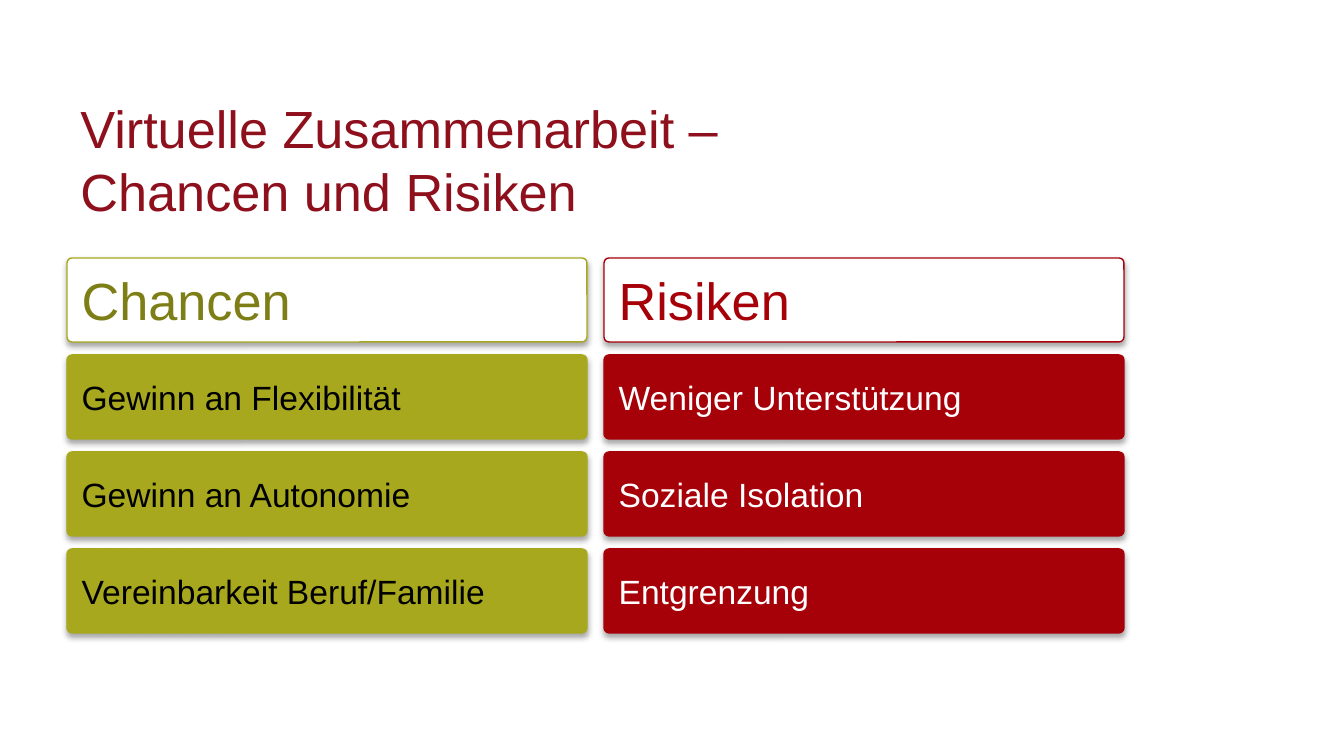
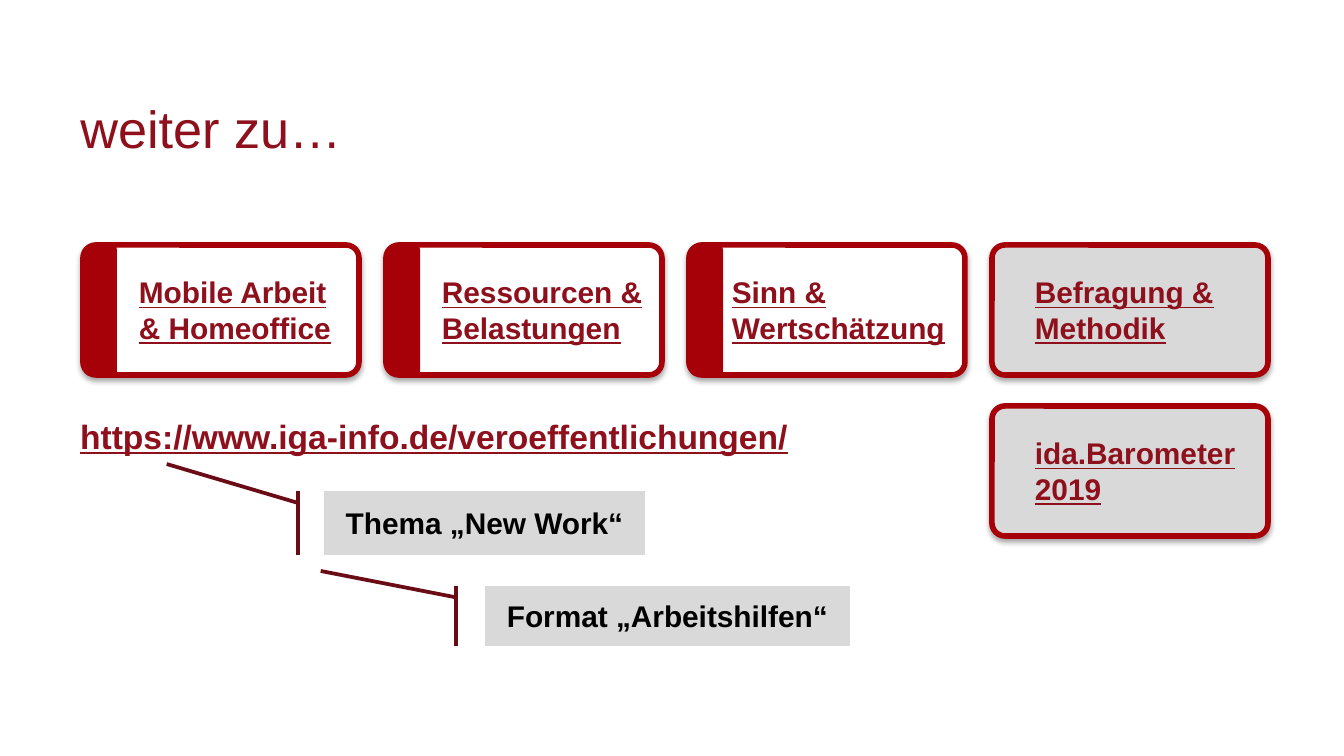
from dataclasses import dataclass

from lxml import etree
from pptx import Presentation
from pptx import util as u
from pptx.dml.color import RGBColor
from pptx.enum import shapes, text
from pptx.oxml import ns
from pptx.shapes.autoshape import Shape
from pptx.slide import Slide

PX = 914400 / 134.4  # EMU in one px
FONT = "Arial"
WHITE, BLACK, GREY = "FFFFFF", "000000", "D9D9D9"
RED, TITLE_RED, DARK_RED = "A60009", "8E101C", "690C15"
OLIVE, DARK_OLIVE = "A8A81E", "7E7E17"
LEFT = 67
SHAPE = shapes.MSO_SHAPE


@dataclass(frozen=True)
class Column:
    heading: str
    heading_color: str
    color: str
    text_color: str
    items: tuple[str, ...]


@dataclass(frozen=True)
class Card:
    label: str
    col: int
    row: int = 0
    indent: int = 26
    fill: str = WHITE
    bar: bool = False


@dataclass(frozen=True)
class Callout:
    label: str
    box: tuple[int, int, int, int]
    pointer: tuple[float, float]  # tip, as (y, x) share of the box


COLUMNS = (
    Column("Chancen", DARK_OLIVE, OLIVE, BLACK,
           ("Gewinn an Flexibilität", "Gewinn an Autonomie", "Vereinbarkeit Beruf/Familie")),
    Column("Risiken", RED, RED, WHITE,
           ("Weniger Unterstützung", "Soziale Isolation", "Entgrenzung")),
)
CARDS = (
    Card("Mobile Arbeit & Homeoffice", 0, indent=39, bar=True),
    Card("Ressourcen & Belastungen", 1, indent=39, bar=True),
    Card("Sinn & Wertschätzung", 2, bar=True),
    Card("Befragung & Methodik", 3, fill=GREY),
    Card("ida.Barometer 2019", 3, row=1, fill=GREY),
)
CALLOUTS = (
    Callout("Thema „New Work“", (324, 491, 321, 64), (-0.42, -0.49)),
    Callout("Format „Arbeitshilfen“", (485, 586, 365, 60), (-0.25, -0.45)),
)


def px(n: int) -> u.Emu:
    return u.Emu(round(n * PX))


def rgb(color: str) -> RGBColor:
    return RGBColor.from_string(color)


def write(sp: Shape, content: str, size: int, color: str, bold: bool = False,
          underline: bool = False, align=text.PP_ALIGN.LEFT,
          anchor=text.MSO_ANCHOR.MIDDLE, indent: int = 0) -> None:
    tf = sp.text_frame
    tf.text = content
    tf.word_wrap = True
    tf.auto_size = text.MSO_AUTO_SIZE.NONE
    tf.vertical_anchor = anchor
    p = tf.paragraphs[0]
    p.alignment = align
    if indent:
        pPr = p._p.get_or_add_pPr()
        pPr.set("marL", str(px(indent)))
        pPr.set("indent", "0")
    for r in p.runs:
        r.font.name, r.font.size = FONT, u.Pt(size)
        r.font.bold, r.font.underline = bold, underline
        r.font.color.rgb = rgb(color)


def add_box(s: Slide, kind: SHAPE, box: tuple[int, int, int, int], fill: str,
            line: str | None = None, width: float = 0.75,
            adjust: tuple[float, ...] = ()) -> Shape:
    sp = s.shapes.add_shape(kind, *map(px, box))
    sp.shadow.inherit = False
    sp.fill.solid()
    sp.fill.fore_color.rgb = rgb(fill)
    if line:
        sp.line.color.rgb = rgb(line)
        sp.line.width = u.Pt(width)
    else:
        sp.line.fill.background()
    for i, value in enumerate(adjust):
        sp.adjustments[i] = value
    return sp


def add_shadow(sp: Shape) -> None:
    """Give the shape a soft shadow that falls straight down."""
    effects = sp._element.spPr.find(ns.qn("a:effectLst"))
    shadow = etree.SubElement(effects, ns.qn("a:outerShdw"), blurRad=str(u.Pt(3.1)),
                              dist=str(u.Pt(1.8)), dir="5400000", rotWithShape="0")
    color = etree.SubElement(shadow, ns.qn("a:srgbClr"), val=BLACK)
    etree.SubElement(color, ns.qn("a:alpha"), val="35000")


def add_slide(prs: Presentation, title: str, title_height: int) -> Slide:
    s = prs.slides.add_slide(prs.slide_layouts[5])
    sp = s.shapes.title
    sp.left, sp.top, sp.width, sp.height = map(px, (LEFT, 90, 898, title_height))
    write(sp, title, 28, TITLE_RED, anchor=text.MSO_ANCHOR.TOP)
    return s


def add_column(s: Slide, col: int, column: Column) -> None:
    for row, label in enumerate((column.heading, *column.items)):
        head = row == 0
        sp = add_box(s, SHAPE.ROUNDED_RECTANGLE, (LEFT + 537 * col, 258 + 97 * row, 520, 84),
                     WHITE if head else column.color, column.color, adjust=(0.06,))
        add_shadow(sp)
        write(sp, label, 28 if head else 18,
              column.heading_color if head else column.text_color)


def add_card(s: Slide, card: Card) -> None:
    x, y = 83 + 303 * card.col, 245 + 161 * card.row
    sp = add_box(s, SHAPE.ROUNDED_RECTANGLE, (x, y, 276, 130), card.fill, RED, 3, (0.1,))
    add_shadow(sp)
    write(sp, card.label, 16, TITLE_RED, bold=True, underline=True, indent=card.indent)
    if card.bar:
        bar = add_box(s, SHAPE.ROUNDED_RECTANGLE, (x + 2, y, 32, 131), RED, adjust=(0.15,))
        s.shapes.add_group_shape([sp, bar])


def add_callout(s: Slide, callout: Callout) -> None:
    sp = add_box(s, SHAPE.LINE_CALLOUT_1_ACCENT_BAR, callout.box, GREY, DARK_RED, 2,
                 (0.19, -0.08, *callout.pointer))
    write(sp, callout.label, 16, BLACK, bold=True, align=text.PP_ALIGN.CENTER)


def build_chances(prs: Presentation) -> None:
    s = add_slide(prs, "Virtuelle Zusammenarbeit –\vChancen und Risiken", 153)
    for col, column in enumerate(COLUMNS):
        add_column(s, col, column)


def build_links(prs: Presentation) -> None:
    s = add_slide(prs, "weiter zu…", 95)
    for card in CARDS:
        add_card(s, card)
    url = s.shapes.add_textbox(*map(px, (LEFT, 409, 1126, 54)))
    write(url, "https://www.iga-info.de/veroeffentlichungen/", 18, TITLE_RED,
          bold=True, underline=True)
    for callout in CALLOUTS:
        add_callout(s, callout)


def main() -> None:
    prs = Presentation()
    prs.slide_width, prs.slide_height = px(1344), px(756)
    build_chances(prs)
    build_links(prs)
    prs.save("out.pptx")


if __name__ == "__main__":
    main()
